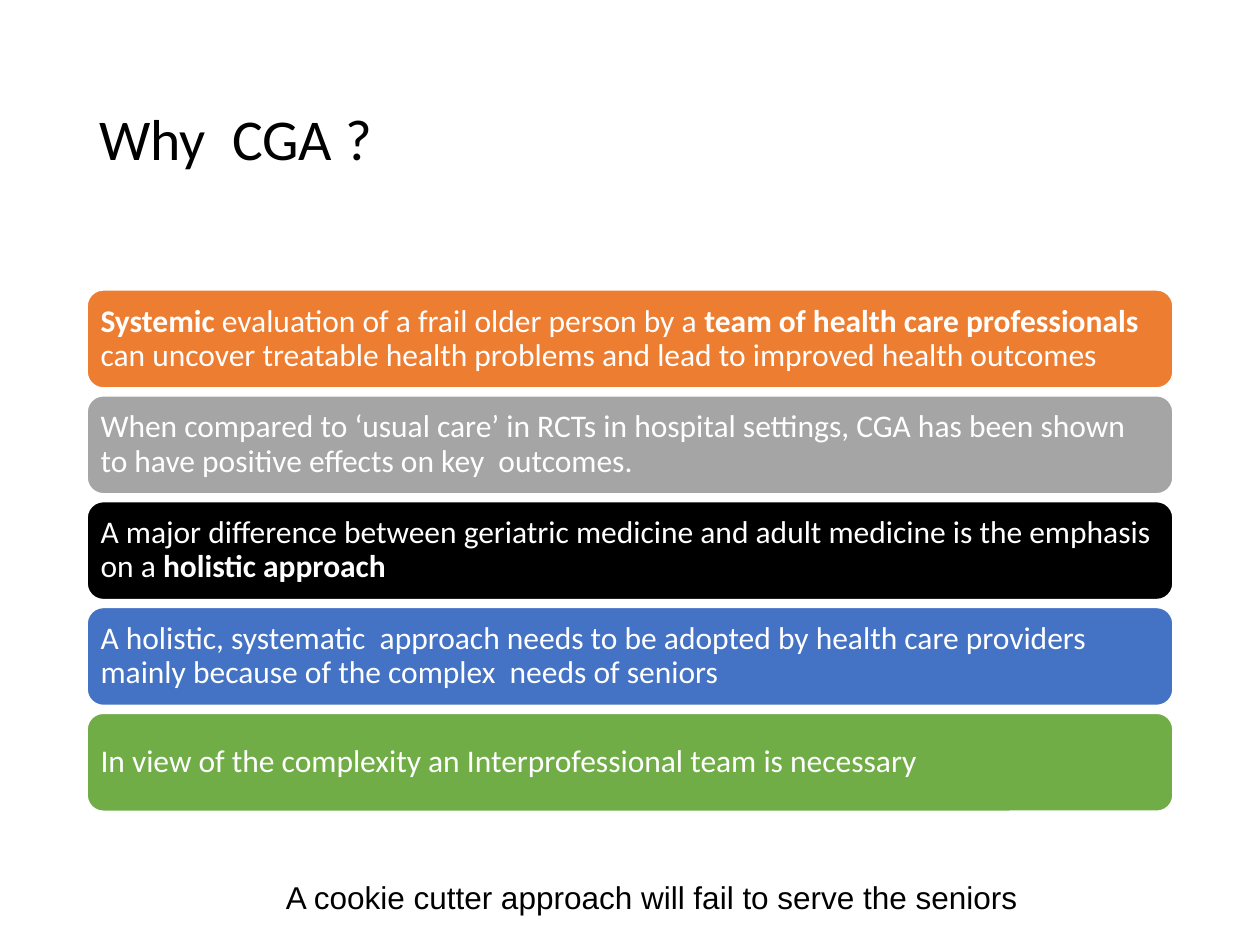
from pptx import Presentation
from pptx.dml.color import RGBColor
from pptx.enum.shapes import MSO_SHAPE
from pptx.enum.text import MSO_ANCHOR, PP_ALIGN
from pptx.util import Inches, Pt

TITLE = "Why  CGA ?"
CAPTION = "A cookie cutter approach will fail to serve the seniors"
# Each bar: fill colour, then runs of (text, bold)
BARS = [
    ("ED7D31", [
        ("Systemic", True),
        (" evaluation of a frail older person by a ", False),
        ("team of health care professionals ", True),
        ("can uncover treatable health problems and lead to improved health outcomes", False)]),
    ("A5A5A5", [
        ("When compared to ‘usual care’ in RCTs in hospital settings, CGA has been "
         "shown to have positive effects on key  outcomes.", False)]),
    ("000000", [
        ("A major difference between geriatric medicine and adult medicine is the "
         "emphasis on a ", False),
        ("holistic approach", True)]),
    ("4472C4", [
        ("A holistic, systematic  approach needs to be adopted by health care providers "
         "mainly because of the complex  needs of seniors", False)]),
    ("70AD47", [
        ("In view of the complexity an Interprofessional team is necessary", False)]),
]
LEFT, WIDTH = 0.69, 8.62
BAR_TOP, BAR_HEIGHT, BAR_PITCH = 2.3, 0.78, 0.84
BAR_INSET = 0.07


def rgb(value):
    return RGBColor.from_string(value)


def write(tf, runs, font, size, color, anchor, spacing=1.0):
    tf.word_wrap = True
    tf.vertical_anchor = anchor
    p = tf.paragraphs[0]
    p.alignment = PP_ALIGN.LEFT
    p.line_spacing = spacing
    p.font.name, p.font.size = font, Pt(size)
    p.font.color.rgb = rgb(color)
    for text, bold in runs:
        r = p.add_run()
        r.text = text
        if bold:
            r.font.bold = True


def add_text(slide, box, text, *style):
    sp = slide.shapes.add_textbox(*map(Inches, box))
    write(sp.text_frame, [(text, False)], *style)


def add_bar(slide, top, fill, runs):
    sp = slide.shapes.add_shape(MSO_SHAPE.ROUNDED_RECTANGLE, Inches(LEFT), Inches(top),
                                Inches(WIDTH), Inches(BAR_HEIGHT))
    sp.shadow.inherit = False
    sp.fill.solid()
    sp.fill.fore_color.rgb = rgb(fill)
    sp.line.color.rgb = rgb("FFFFFF")
    sp.line.width = Pt(1)
    tf = sp.text_frame
    tf.margin_left = tf.margin_right = Inches(BAR_INSET)
    tf.margin_top = tf.margin_bottom = Inches(BAR_INSET)
    write(tf, runs, "Calibri", 18, "FFFFFF", MSO_ANCHOR.MIDDLE, 0.9)


def main():
    prs = Presentation()
    prs.slide_width, prs.slide_height = Inches(10), Inches(7.5)
    slide = prs.slides.add_slide(prs.slide_layouts[6])
    add_text(slide, (LEFT, 0.4, WIDTH, 1.45), TITLE,
             "Calibri", 33, "000000", MSO_ANCHOR.MIDDLE, 0.9)
    for i, (fill, runs) in enumerate(BARS):
        add_bar(slide, BAR_TOP + i * BAR_PITCH, fill, runs)
    add_text(slide, (2.17, 6.92, 6.17, 0.4), CAPTION,
             "Arial", 18, "000000", MSO_ANCHOR.TOP)
    prs.save("out.pptx")


if __name__ == "__main__":
    main()
